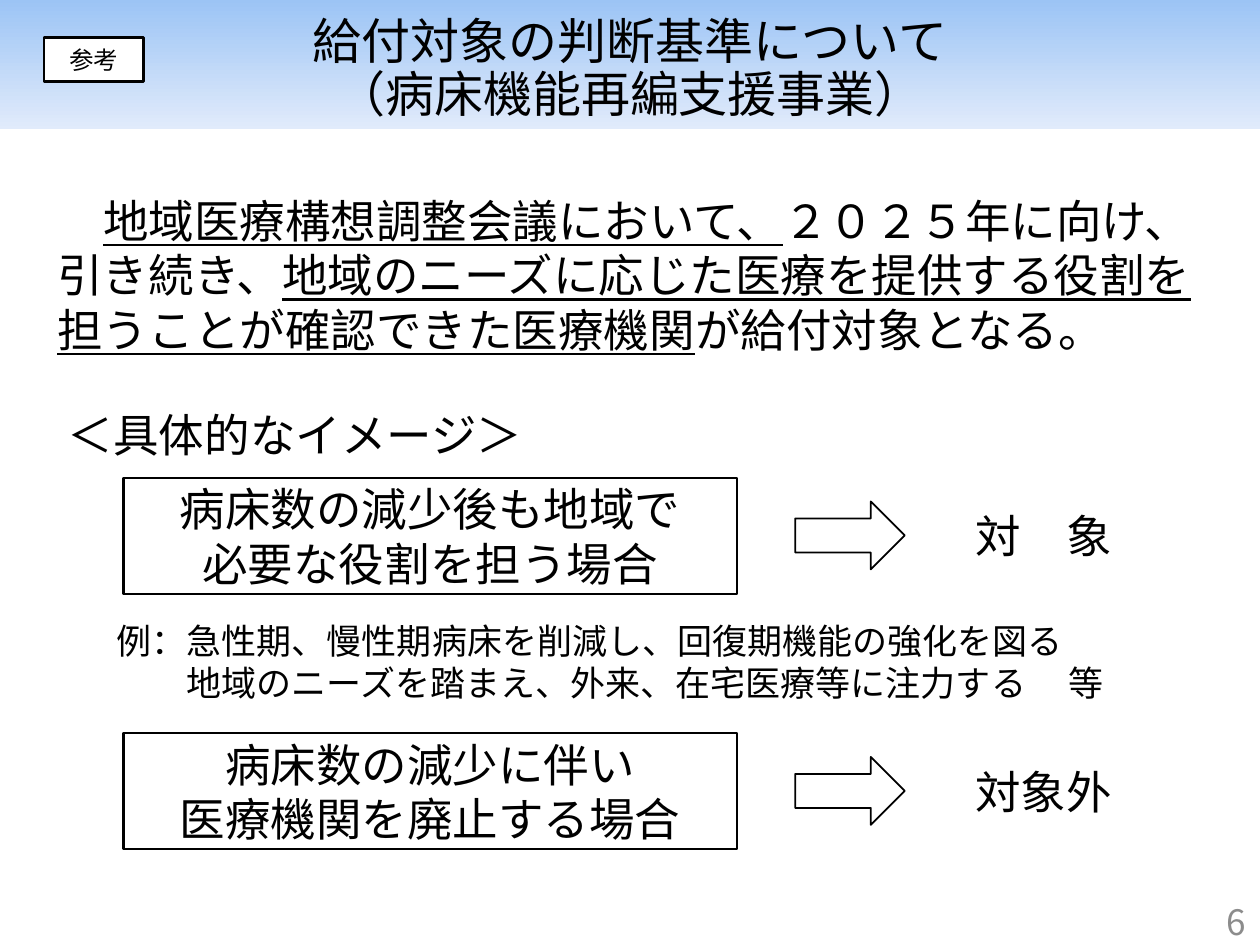
from dataclasses import dataclass

from lxml.etree import SubElement
from pptx import Presentation
from pptx.dml.color import RGBColor
from pptx.enum.shapes import MSO_SHAPE as Preset
from pptx.enum.text import MSO_ANCHOR as Anchor, MSO_AUTO_SIZE as AutoSize, PP_ALIGN as Align
from pptx.oxml.ns import qn
from pptx.shapes.autoshape import Shape
from pptx.slide import Slide
from pptx.util import Cm, Pt

BLACK = RGBColor(0x00, 0x00, 0x00)
WHITE = RGBColor(0xFF, 0xFF, 0xFF)
GRAY = RGBColor(0x8C, 0x8C, 0x8C)
BAND_TOP = RGBColor(0x9A, 0xC3, 0xF5)
BAND_BOTTOM = RGBColor(0xE1, 0xEB, 0xFB)
JAPANESE_FONT = "Noto Sans CJK JP"
LATIN_FONT = "Calibri"
ROW_HEIGHT = 2.34


@dataclass(frozen=True)
class Box:
    """Position and size in centimetres."""
    left: float
    top: float
    width: float
    height: float

    def lengths(self) -> tuple[Cm, Cm, Cm, Cm]:
        return Cm(self.left), Cm(self.top), Cm(self.width), Cm(self.height)


@dataclass(frozen=True)
class TextRun:
    text: str
    underline: bool = False


@dataclass(frozen=True)
class Case:
    condition: tuple[str, str]
    verdict: str
    top: float


CASES = (
    Case(("病床数の減少後も地域で", "必要な役割を担う場合"), "対　象", 9.63),
    Case(("病床数の減少に伴い", "医療機関を廃止する場合"), "対象外", 14.78),
)
CRITERIA = (
    (TextRun("地域医療構想調整会議において、", True), TextRun("２０２５年に向け、")),
    (TextRun("引き続き、"), TextRun("地域のニーズに応じた医療を提供する役割を", True)),
    (TextRun("担うことが確認できた医療機関", True), TextRun("が給付対象となる。")),
)
EXAMPLES = (
    (TextRun("例：急性期、慢性期病床を削減し、回復期機能の強化を図る"),),
    (TextRun("地域のニーズを踏まえ、外来、在宅医療等に注力する\t等"),),
)


def add_run(paragraph, text_run: TextRun, size: float, color: RGBColor = BLACK,
            font_name: str = JAPANESE_FONT) -> None:
    run = paragraph.add_run()
    run.text = text_run.text
    run.font.size = Pt(size)
    run.font.name = font_name
    run.font.color.rgb = color
    if text_run.underline:
        run.font.underline = True
    SubElement(run.font._element, qn("a:ea"), typeface=JAPANESE_FONT)


def write(shape: Shape, lines, size: float, align=Align.CENTER, anchor=Anchor.MIDDLE,
          color: RGBColor = BLACK, font_name: str = JAPANESE_FONT) -> None:
    """Fill the shape with one paragraph per line, each line a tuple of runs."""
    frame = shape.text_frame
    frame.word_wrap = True
    frame.auto_size = AutoSize.NONE
    frame.vertical_anchor = anchor
    for index, line in enumerate(lines):
        paragraph = frame.add_paragraph() if index else frame.paragraphs[0]
        paragraph.alignment = align
        for text_run in line:
            add_run(paragraph, text_run, size, color, font_name)


def add_label(slide: Slide, box: Box, lines, size: float, **style) -> Shape:
    label = slide.shapes.add_textbox(*box.lengths())
    write(label, lines, size, **style)
    return label


def add_outlined(slide: Slide, preset: Preset, box: Box, line_width: float,
                 filled: bool = True) -> Shape:
    shape = slide.shapes.add_shape(preset, *box.lengths())
    shape.shadow.inherit = False
    if filled:
        shape.fill.solid()
        shape.fill.fore_color.rgb = WHITE
    else:
        shape.fill.background()
    shape.line.color.rgb = BLACK
    shape.line.width = Pt(line_width)
    return shape


def format_title(slide: Slide) -> None:
    title = slide.shapes.title
    title.left, title.top, title.width, title.height = Box(0, -0.08, 25.4, 2.69).lengths()
    title.fill.gradient()
    title.fill.gradient_angle = 270
    for stop, color in zip(title.fill.gradient_stops, (BAND_TOP, BAND_BOTTOM)):
        stop.color.rgb = color
    write(title, [(TextRun("給付対象の判断基準について"),)], 28, anchor=Anchor.BOTTOM)
    paragraph = title.text_frame.paragraphs[0]
    paragraph.line_spacing = 0.9
    paragraph.add_line_break()
    add_run(paragraph, TextRun("（病床機能再編支援事業）"), 28)


def set_indent(paragraph, margin: float = 0, first_line: float = 0) -> None:
    properties = paragraph._p.get_or_add_pPr()
    properties.set("marL", str(Cm(margin)))
    properties.set("indent", str(Cm(first_line)))


def add_criteria(slide: Slide) -> None:
    label = add_label(slide, Box(0.91, 3.76, 24.4, 3.6), CRITERIA, 26,
                      align=Align.LEFT, anchor=Anchor.TOP)
    set_indent(label.text_frame.paragraphs[0], first_line=0.92)


def add_examples(slide: Slide) -> None:
    label = add_label(slide, Box(2.1, 12.37, 22.5, 2), EXAMPLES, 20,
                      align=Align.LEFT, anchor=Anchor.TOP)
    first, second = label.text_frame.paragraphs
    set_indent(first, 1.41, -1.41)
    set_indent(second, 1.41)
    tabs = SubElement(second._p.get_or_add_pPr(), qn("a:tabLst"))
    SubElement(tabs, qn("a:tab"), pos=str(Cm(20.14)), algn="l")


def add_case(slide: Slide, case: Case) -> None:
    condition = add_outlined(slide, Preset.RECTANGLE, Box(2.49, case.top, 12.37, ROW_HEIGHT), 1.25)
    write(condition, [(TextRun(line),) for line in case.condition], 26)
    add_outlined(slide, Preset.RIGHT_ARROW, Box(16.03, case.top + 0.48, 2.21, 1.37), 1, filled=False)
    add_label(slide, Box(18.42, case.top, 5.23, ROW_HEIGHT), [(TextRun(case.verdict),)], 26)


def main() -> None:
    presentation = Presentation()
    presentation.slide_width, presentation.slide_height = Cm(25.4), Cm(19.05)
    slide = presentation.slides.add_slide(presentation.slide_layouts[5])
    format_title(slide)
    add_criteria(slide)
    add_examples(slide)
    for case in CASES:
        add_case(slide, case)
    add_label(slide, Box(0.61, 7.59, 10.69, ROW_HEIGHT), [(TextRun("＜具体的なイメージ＞"),)], 26)
    add_label(slide, Box(19.99, 18.06, 5.38, 1.02), [(TextRun("6"),)], 20,
              align=Align.RIGHT, color=GRAY)
    reference = add_outlined(slide, Preset.RECTANGLE, Box(0.89, 0.76, 2.01, 0.89), 1.5)
    write(reference, [(TextRun("参考"),)], 14, font_name=LATIN_FONT)
    presentation.save("out.pptx")


if __name__ == "__main__":
    main()
